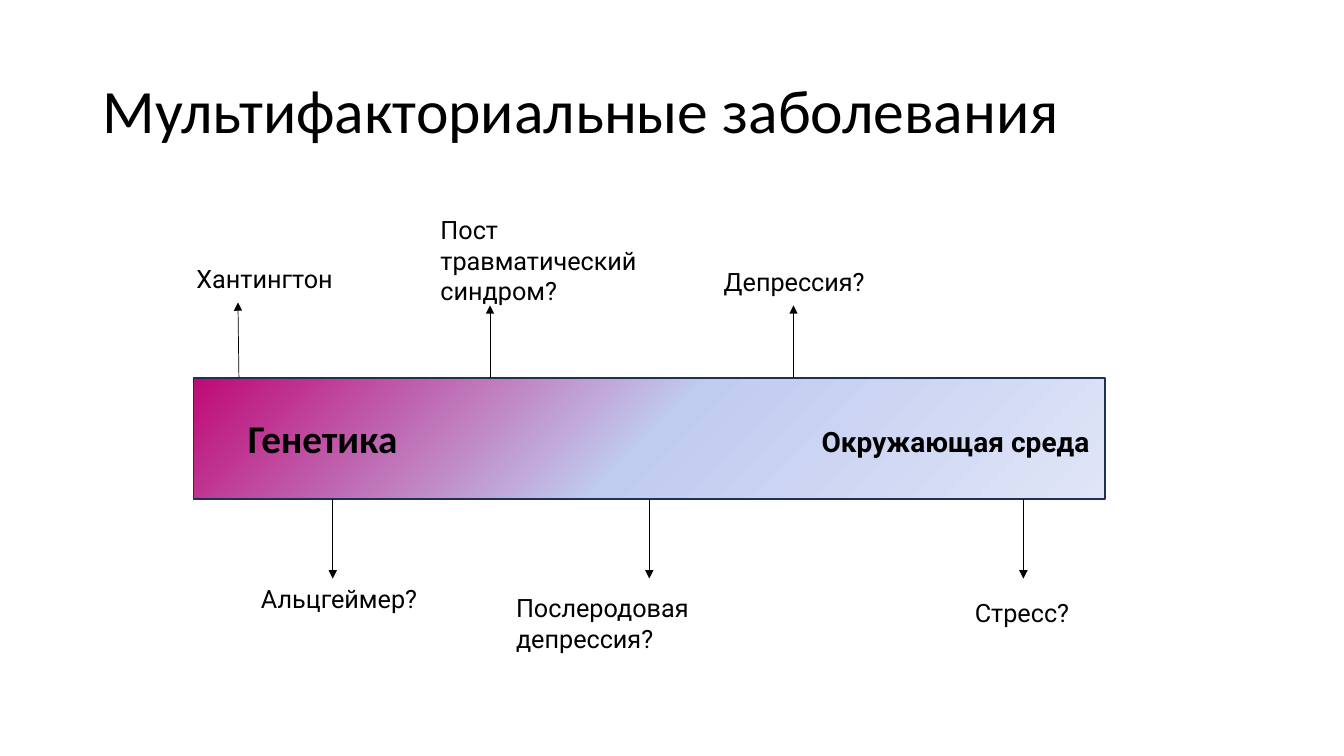
"""Draw the slide on multifactorial diseases, on a grid of tenth-inch cells."""
from copy import deepcopy
from dataclasses import dataclass

from lxml.etree import SubElement
from pptx import Presentation
from pptx.dml.color import RGBColor
from pptx.enum.shapes import MSO_CONNECTOR as Connector, MSO_SHAPE as Preset
from pptx.enum.text import MSO_ANCHOR as Anchor, MSO_AUTO_SIZE as AutoSize, PP_ALIGN as Align
from pptx.oxml.ns import qn
from pptx.slide import Slide
from pptx.text.text import TextFrame
from pptx.util import Inches, Length, Pt

COLUMNS, ROWS = 133.3, 75
BAR_LEFT, BAR_TOP, BAR_WIDTH, BAR_HEIGHT = 19.2, 37.5, 90.4, 12
BAR_BOTTOM = BAR_TOP + BAR_HEIGHT
BLACK, NAVY = "000000", "1E3256"
BAR_STOPS = ((0, "BF0975"), (0.5, "C0CBF0"), (1, "E0E5F7"))


@dataclass(frozen=True)
class Label:
    words: str
    left: float
    top: float
    width: float
    height: float = 4
    size: float = 18
    font: str = "Roboto"
    bold: bool = False
    space_before: float = 0


@dataclass(frozen=True)
class Callout:
    label: Label
    column: float
    tip_row: float
    lean: float = 0


TITLE = Label("Мультифакториальные заболевания", 9.2, 4, 115, 14.5, 44, "Calibri")
FACTORS = (
    Label("Генетика", 23.6, 40.6, 18.9, 5.7, 28, "Calibri", True),
    Label("Окружающая среда", 80.5, 41.6, 33.6, 4.4, 20, bold=True),
)
CALLOUTS = (
    Callout(Label("Хантингтон", 18.5, 25.6, 19.9), 23.7, 30, -0.1),
    Callout(Label("Пост травматический синдром?", 42.7, 20.8, 25.8, 10, space_before=3), 48.6, 30.3),
    Callout(Label("Депрессия?", 70.8, 25.9, 17.7), 78.7, 30.3),
    Callout(Label("Альцгеймер?", 24.9, 57.4, 17.5), 33, 57.4),
    Callout(Label("Послеродовая депрессия?", 50.2, 58.3, 30, 7.1), 64.4, 57.4),
    Callout(Label("Стресс?", 95.7, 58.8, 11.8), 101.5, 57.4),
)


def cells(count: float) -> Length:
    """Turn a number of grid columns or rows into a length."""
    return Inches(count / 10)


def color(value: str) -> RGBColor:
    """Turn a hex string into a colour."""
    return RGBColor.from_string(value)


def write(frame: TextFrame, label: Label) -> None:
    """Fill a text frame with the words of a label."""
    frame.word_wrap = True
    para = frame.paragraphs[0]
    para.alignment = Align.LEFT
    para.space_before = Pt(label.space_before)
    span = para.add_run()
    span.text = label.words
    span.font.name = label.font
    span.font.size = Pt(label.size)
    span.font.bold = label.bold
    span.font.color.rgb = color(BLACK)


def add_title(page: Slide, label: Label) -> None:
    """Move and format the title placeholder."""
    title = page.shapes.title
    title.left, title.top = cells(label.left), cells(label.top)
    title.width, title.height = cells(label.width), cells(label.height)
    write(title.text_frame, label)
    title.text_frame.auto_size = AutoSize.NONE
    title.text_frame.vertical_anchor = Anchor.MIDDLE
    title.text_frame.paragraphs[0].line_spacing = 0.9


def add_label(page: Slide, label: Label) -> None:
    """Add a text box for a label."""
    box = page.shapes.add_textbox(
        cells(label.left), cells(label.top), cells(label.width), cells(label.height)
    )
    write(box.text_frame, label)
    box.text_frame.auto_size = AutoSize.SHAPE_TO_FIT_TEXT


def add_bar(page: Slide) -> None:
    """Add the bar that fades from genetics to environment."""
    bar = page.shapes.add_shape(
        Preset.RECTANGLE, cells(BAR_LEFT), cells(BAR_TOP), cells(BAR_WIDTH), cells(BAR_HEIGHT)
    )
    bar.shadow.inherit = False
    bar.line.color.rgb = color(NAVY)
    bar.line.width = Pt(1)
    bar.fill.gradient()
    bar.fill.gradient_angle = 315
    stop_list = next(bar.element.spPr.iter(qn("a:gsLst")))
    stop_list.append(deepcopy(stop_list[-1]))
    for stop, (position, value) in zip(bar.fill.gradient_stops, BAR_STOPS):
        stop.position = position
        stop.color.rgb = color(value)


def add_arrow(page: Slide, callout: Callout) -> None:
    """Add the arrow from the nearer edge of the bar to a callout."""
    edge = BAR_TOP if callout.tip_row < BAR_TOP else BAR_BOTTOM
    arrow = page.shapes.add_connector(
        Connector.STRAIGHT,
        cells(callout.column),
        cells(edge),
        cells(callout.column + callout.lean),
        cells(callout.tip_row),
    )
    arrow.line.color.rgb = color(BLACK)
    arrow.line.width = Pt(0.5)
    SubElement(arrow.line._get_or_add_ln(), qn("a:tailEnd"), type="triangle")
    SubElement(arrow.element.spPr, qn("a:effectLst"))


def main() -> None:
    """Build the deck and save it."""
    deck = Presentation()
    deck.slide_width, deck.slide_height = cells(COLUMNS), cells(ROWS)
    page = deck.slides.add_slide(deck.slide_layouts.get_by_name("Title Only"))
    add_title(page, TITLE)
    add_bar(page)
    for factor in FACTORS:
        add_label(page, factor)
    for callout in CALLOUTS:
        add_arrow(page, callout)
        add_label(page, callout.label)
    deck.save("out.pptx")


if __name__ == "__main__":
    main()
